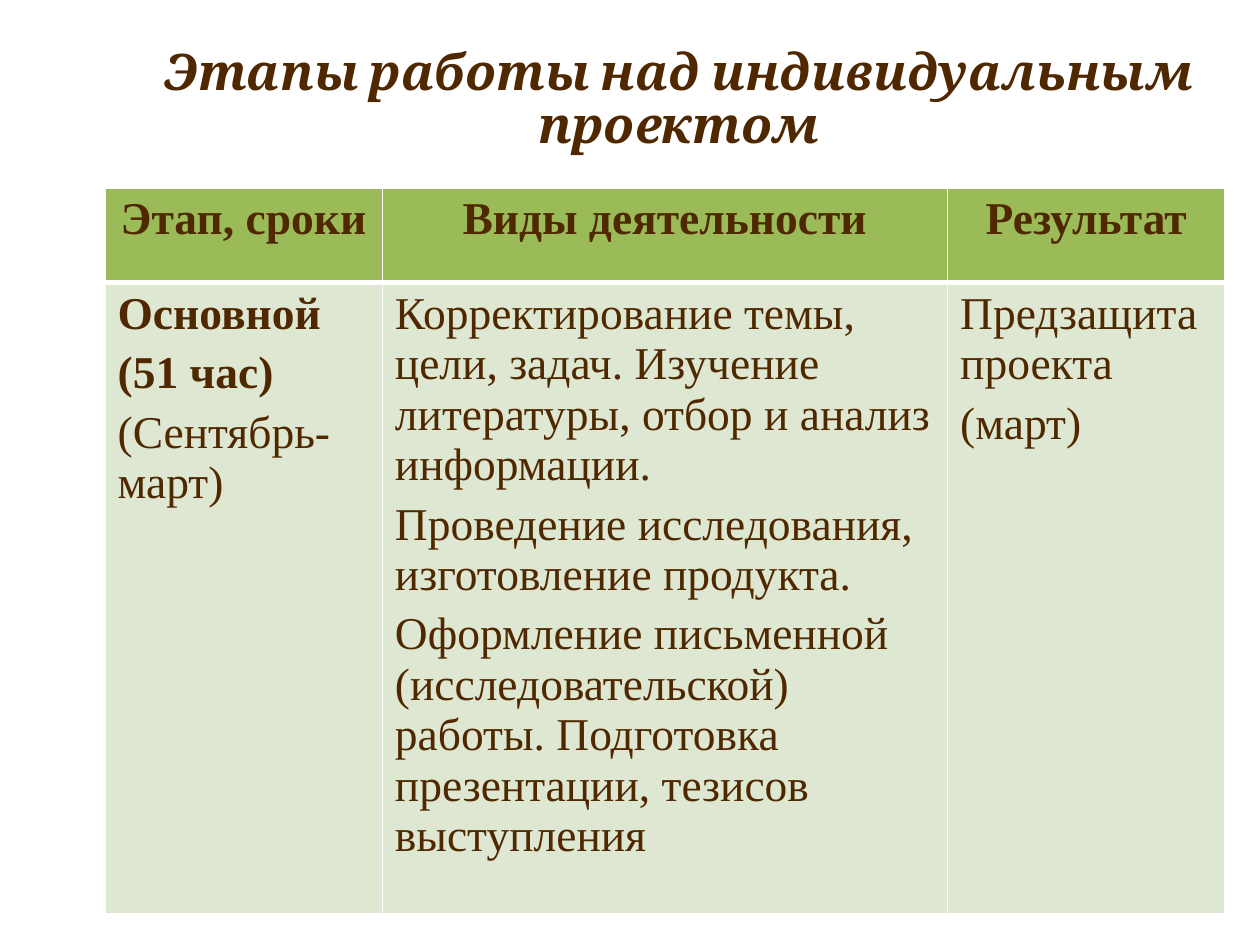
from lxml.etree import SubElement
from pptx import Presentation
from pptx.dml.color import RGBColor
from pptx.enum.text import MSO_ANCHOR as Anchor, PP_ALIGN as Align
from pptx.oxml.ns import qn
from pptx.util import Pt

COLORS = {"text": "502800", "header": "9BBB59", "body": "DEE7D1", "border": "FFFFFF"}
TITLE = "Этапы работы над индивидуальным проектом"
HEADERS = ["Этап, сроки", "Виды деятельности", "Результат"]
STAGE = [
    [("Основной", True), ("(51 час)", True), ("(Сентябрь-март)", False)],
    [
        ("Корректирование темы, цели, задач. Изучение литературы, "
         "отбор и анализ информации.", False),
        ("Проведение исследования, изготовление продукта.", False),
        ("Оформление письменной (исследовательской) работы. "
         "Подготовка презентации, тезисов выступления", False),
    ],
    [("Предзащита проекта", False), ("(март)", False)],
]


class StageSlide:
    title_font = "Cambria"
    table_font = "Times New Roman"
    title_size = 28.8
    table_size = 26

    def __init__(self, presentation):
        self.slide = presentation.slides.add_slide(presentation.slide_layouts[6])

    def add_run(self, paragraph, text, font_name, size, bold, italic=False):
        run = paragraph.add_run()
        run.text = text
        font = run.font
        font.name, font.size = font_name, Pt(size)
        font.bold, font.italic = bold, italic
        font.color.rgb = RGBColor.from_string(COLORS["text"])

    def add_title(self, text, left, top, width, height):
        shape = self.slide.shapes.add_textbox(Pt(left), Pt(top), Pt(width), Pt(height))
        frame = shape.text_frame
        frame.word_wrap = True
        frame.vertical_anchor = Anchor.MIDDLE
        paragraph = frame.paragraphs[0]
        paragraph.alignment = Align.CENTER
        paragraph.line_spacing = 0.87
        self.add_run(paragraph, text, self.title_font, self.title_size, True, True)

    def add_borders(self, cell, bottom):
        properties = cell._tc.get_or_add_tcPr()
        for side, width in (("L", 1), ("R", 1), ("T", 1), ("B", bottom)):
            line = SubElement(properties, qn(f"a:ln{side}"), w=str(Pt(width)))
            fill = SubElement(line, qn("a:solidFill"))
            SubElement(fill, qn("a:srgbClr"), val=COLORS["border"])

    def fill_cell(self, cell, lines, color, align, bottom):
        self.add_borders(cell, bottom)
        cell.fill.solid()
        cell.fill.fore_color.rgb = RGBColor.from_string(COLORS[color])
        frame = cell.text_frame
        for index, (text, bold) in enumerate(lines):
            paragraph = frame.add_paragraph() if index else frame.paragraphs[0]
            paragraph.alignment = align
            if index:
                paragraph.space_before = Pt(0.2 * self.table_size)
            self.add_run(paragraph, text, self.table_font, self.table_size, bold)

    def add_table(self, headers, body, left, top, widths, heights):
        table = self.slide.shapes.add_table(
            len(heights), len(widths), Pt(left), Pt(top),
            Pt(sum(widths)), Pt(sum(heights))).table
        for column, width in zip(table.columns, widths):
            column.width = Pt(width)
        for row, height in zip(table.rows, heights):
            row.height = Pt(height)
        for index, (header, lines) in enumerate(zip(headers, body)):
            self.fill_cell(table.cell(0, index), [(header, True)], "header", Align.CENTER, 3)
            self.fill_cell(table.cell(1, index), lines, "body", Align.LEFT, 1)


def main():
    presentation = Presentation()
    presentation.slide_width, presentation.slide_height = Pt(720), Pt(540)
    stage_slide = StageSlide(presentation)
    stage_slide.add_title(TITLE, 76.3, 21.6, 623.5, 72.7)
    stage_slide.add_table(HEADERS, STAGE, 60, 107.5, [158.5, 323, 158.5], [54, 332.6])
    presentation.save("out.pptx")


if __name__ == "__main__":
    main()
